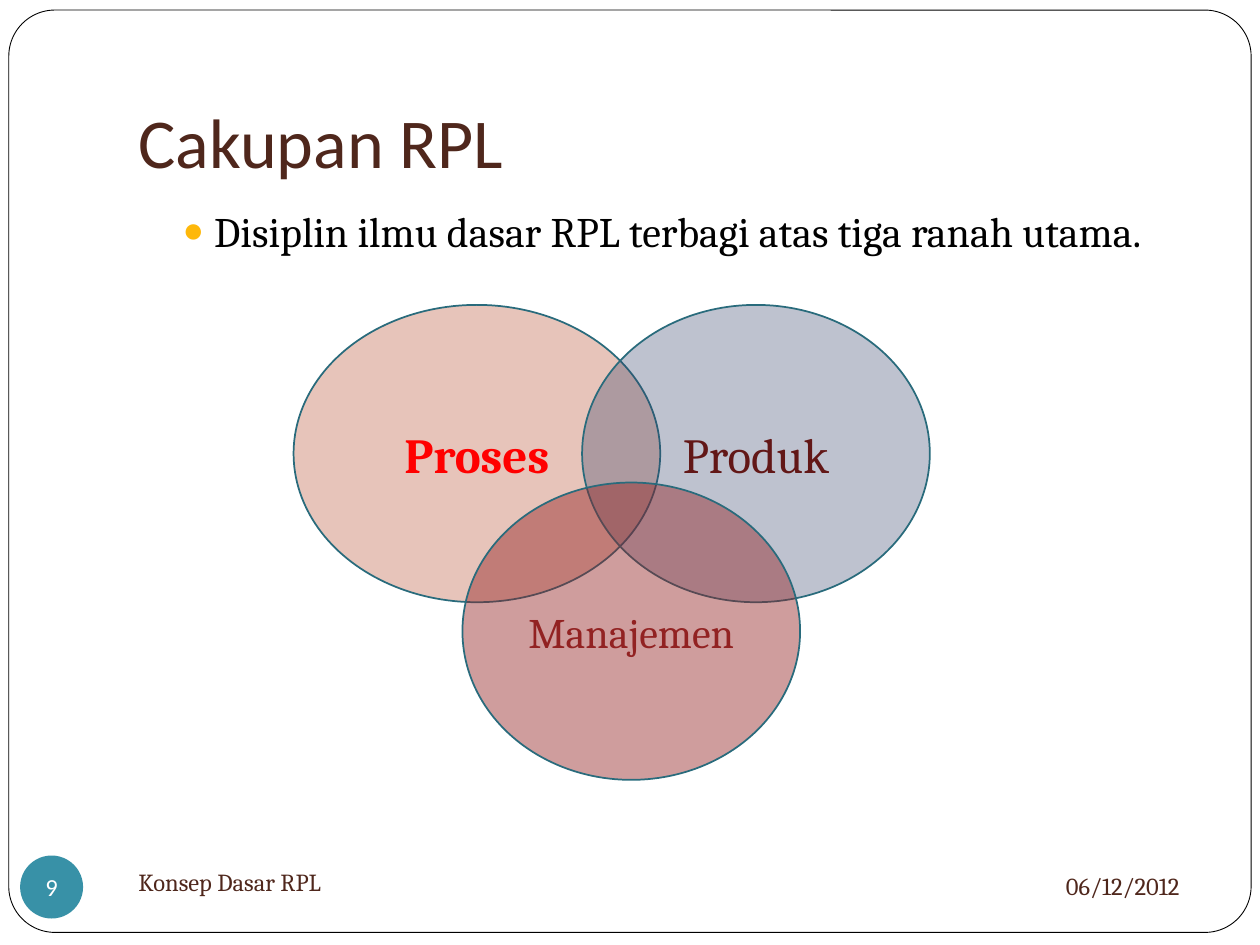
"""Builds the slide on the scope of RPL with its three-circle diagram."""
from lxml.etree import SubElement
from pptx import Presentation
from pptx.dml.color import RGBColor
from pptx.enum.shapes import MSO_SHAPE
from pptx.enum.text import MSO_ANCHOR, MSO_AUTO_SIZE, PP_ALIGN
from pptx.oxml.ns import qn
from pptx.util import Inches, Pt

THEME = {
    "head": "Calibri", "text": "Cambria",
    "brown": "4F271C", "black": "000000", "white": "FFFFFF",
    "teal": "3891A7", "edge": "296B7C", "gold": "FEB80A",
    "title": 40, "body": 24, "foot": 14,
}
TITLE = "Cakupan RPL"
BODY = "Disiplin ilmu dasar RPL terbagi atas tiga ranah utama."
NUMBER = "9"
FOOTERS = [
    ("06/12/2012", (6.75, 6.77, 2.71, 0.52), PP_ALIGN.RIGHT),
    ("Konsep Dasar RPL", (1, 6.75, 4.33, 0.5), PP_ALIGN.LEFT),
]
HIGH = 2.36
CIRCLES = [
    ("Proses", 2.33, 2.42, 2.91, "C0654C", 38, "FF0000", 28, True),
    ("Produk", 4.62, 2.42, 2.76, "35436A", 32, "621717", 28, False),
    ("Manajemen", 3.67, 3.83, 2.68, "922222", 44, "922222", 24, False),
]


def color(name):
    return RGBColor.from_string(THEME.get(name, name))


def place(shape, box):
    shape.left, shape.top, shape.width, shape.height = map(Inches, box)


def write(shape, text, face, size, ink, align=PP_ALIGN.LEFT,
          anchor=MSO_ANCHOR.MIDDLE, bold=False):
    frame = shape.text_frame
    frame.text = text
    frame.word_wrap = True
    frame.auto_size = MSO_AUTO_SIZE.NONE
    frame.vertical_anchor = anchor
    para = frame.paragraphs[0]
    para.alignment = align
    font = para.font
    font.name, font.size, font.bold = THEME[face], Pt(size), bold
    font.color.rgb = color(ink)
    return para


def draw(shapes, kind, box, fill, line=None, width=1):
    shape = shapes.add_shape(kind, *map(Inches, box))
    shape.shadow.inherit = False
    shape.fill.solid()
    shape.fill.fore_color.rgb = color(fill)
    if line:
        shape.line.color.rgb = color(line)
        shape.line.width = Pt(width)
    else:
        shape.line.fill.background()
    return shape


def fade(shape, percent):
    tone = shape.fill._xPr.find(qn("a:solidFill"))[0]
    SubElement(tone, qn("a:alpha"), val=str(percent * 1000))


def bullet(para):
    props = para._p.get_or_add_pPr()
    props.set("marL", str(Inches(0.6)))
    props.set("indent", str(Inches(-0.25)))
    tint = SubElement(props, qn("a:buClr"))
    SubElement(tint, qn("a:srgbClr"), val=THEME["gold"])
    SubElement(props, qn("a:buSzPct"), val="85000")
    SubElement(props, qn("a:buChar"), char="●")


def main():
    deck = Presentation()
    deck.slide_width, deck.slide_height = Inches(10), Inches(7.5)
    slide = deck.slides.add_slide(deck.slide_layouts[1])
    shapes = slide.shapes

    border = draw(shapes, MSO_SHAPE.ROUNDED_RECTANGLE,
                  (0.07, 0.08, 9.86, 7.32), "white", "black", 0.5)
    border.adjustments[0] = 0.05
    shapes._spTree.insert(2, border._element)

    title, body = shapes.title, slide.placeholders[1]
    place(title, (1, 0.3, 8.5, 1.25))
    write(title, TITLE, "head", THEME["title"], "brown",
          anchor=MSO_ANCHOR.BOTTOM)
    title.text_frame.margin_bottom = Inches(0.1)

    place(body, (1, 1.58, 8.5, 5))
    item = write(body, BODY, "text", THEME["body"], "black",
                 anchor=MSO_ANCHOR.TOP)
    item.level = 1
    item.space_before = Pt(3.7)
    bullet(item)

    for text, box, align in FOOTERS:
        note = shapes.add_textbox(*map(Inches, box))
        write(note, text, "text", THEME["foot"], "brown", align)

    badge = draw(shapes, MSO_SHAPE.OVAL, (0.16, 6.79, 0.5, 0.5), "teal")
    write(badge, NUMBER, "head", THEME["foot"], "white", PP_ALIGN.CENTER)
    frame = badge.text_frame
    frame.word_wrap = False
    frame.margin_left = frame.margin_right = 0
    frame.margin_top = frame.margin_bottom = 0

    venn = shapes.add_group_shape()
    for text, left, top, wide, fill, alpha, ink, size, bold in CIRCLES:
        oval = draw(venn.shapes, MSO_SHAPE.OVAL, (left, top, wide, HIGH),
                    fill, "edge")
        fade(oval, alpha)
        write(oval, text, "text", size, ink, PP_ALIGN.CENTER, bold=bold)

    deck.save("out.pptx")


if __name__ == "__main__":
    main()
